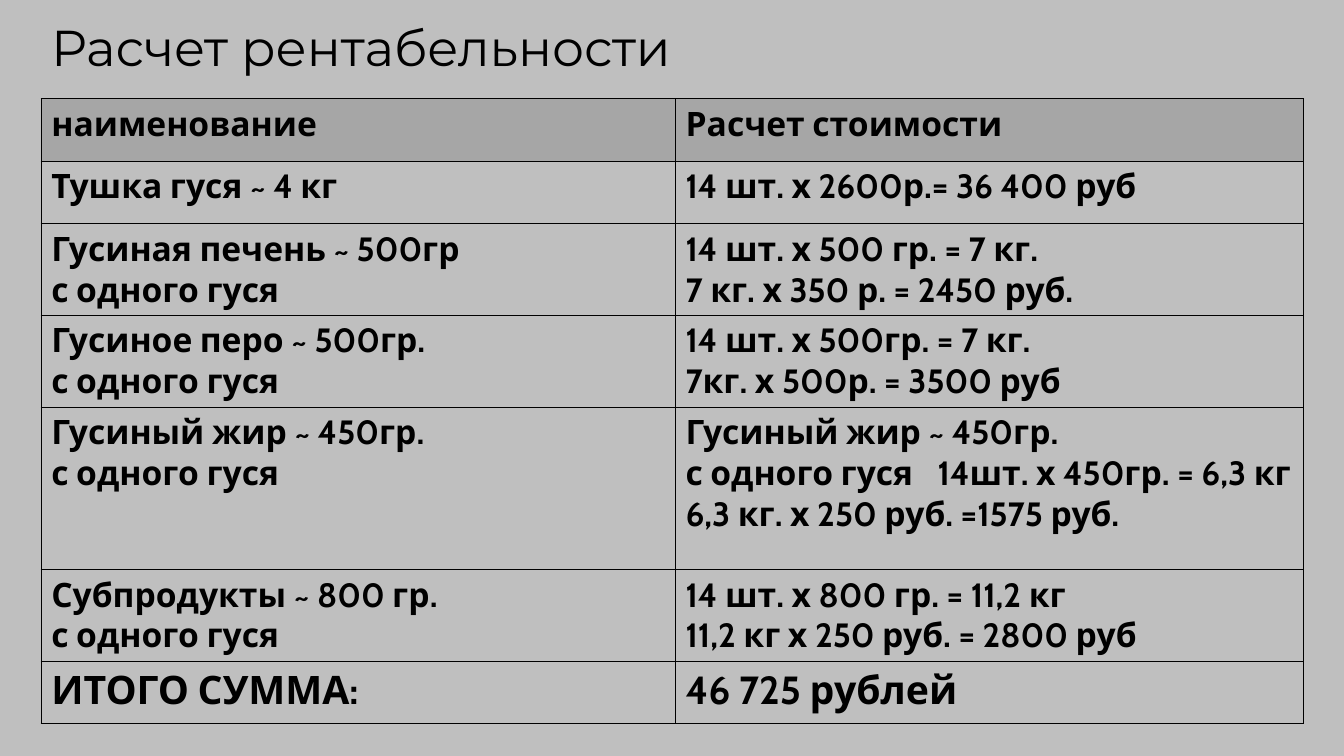
from dataclasses import dataclass

from lxml.etree import SubElement
from pptx import Presentation
from pptx.dml.color import RGBColor
from pptx.enum.text import MSO_AUTO_SIZE
from pptx.oxml.ns import qn
from pptx.util import Inches, Pt

COLORS = {"background": "BFBFBF", "header": "A6A6A6", "ink": "000000"}
TITLE_FORMAT = {"name": "Montserrat", "size": Pt(36), "bold": False}
BODY_FORMAT = {"name": "Cabin", "size": Pt(24), "bold": True}
TOTAL_FORMAT = BODY_FORMAT | {"size": Pt(28)}
COLUMN_WIDTHS = (6.29, 6.23)
LEFT = 0.41


@dataclass
class CostRow:
    item: str
    cost: str
    height: float = 0.62
    fill: str = "background"


PER_GOOSE = "с одного гуся"
COST_ROWS = [
    CostRow("наименование", "Расчет стоимости", fill="header"),
    CostRow("Тушка гуся ~ 4 кг", "14 шт. х 2600р.= 36 400 руб"),
    CostRow(f"Гусиная печень ~ 500гр\n{PER_GOOSE}",
            "14 шт. х 500 гр. = 7 кг.\n7 кг. х 350 р. = 2450 руб.", 0.85),
    CostRow(f"Гусиное перо ~ 500гр.\n{PER_GOOSE}",
            "14 шт. х 500гр. = 7 кг.\n7кг. х 500р. = 3500 руб", 0.85),
    CostRow(f"Гусиный жир ~ 450гр.\n{PER_GOOSE}",
            f"Гусиный жир ~ 450гр.\n{PER_GOOSE}\t14шт. х 450гр. = 6,3 кг\n"
            "6,3 кг. х 250 руб. =1575 руб.", 1.61),
    CostRow(f"Субпродукты ~ 800 гр.\n{PER_GOOSE}",
            "14 шт. х 800 гр. = 11,2 кг\n11,2 кг х 250 руб. = 2800 руб", 0.85),
    CostRow("ИТОГО СУММА:", "46 725 рублей"),
]


def color(name: str) -> RGBColor:
    return RGBColor.from_string(COLORS[name])


def write_text(frame, text: str, font_format: dict) -> None:
    frame.text = text
    for para in frame.paragraphs:
        for span in para.runs:
            for attribute, value in font_format.items():
                setattr(span.font, attribute, value)
            span.font.color.rgb = color("ink")


def add_borders(cell) -> None:
    """Put a 1 pt line on all four sides; call before the cell is filled."""
    properties = cell._tc.get_or_add_tcPr()
    for side in ("lnL", "lnR", "lnT", "lnB"):
        line = SubElement(properties, qn(f"a:{side}"), w=str(Pt(1)))
        line_fill = SubElement(line, qn("a:solidFill"))
        SubElement(line_fill, qn("a:srgbClr"), val=COLORS["ink"])


def add_title(page, text: str) -> None:
    box = page.shapes.add_textbox(Inches(LEFT), Inches(0.11), Inches(6.95), Inches(0.71))
    write_text(box.text_frame, text, TITLE_FORMAT)
    box.text_frame.word_wrap = False
    box.text_frame.auto_size = MSO_AUTO_SIZE.SHAPE_TO_FIT_TEXT


def add_cost_table(page, rows: list[CostRow]) -> None:
    table = page.shapes.add_table(
        len(rows), len(COLUMN_WIDTHS), Inches(LEFT), Inches(0.98),
        Inches(sum(COLUMN_WIDTHS)), Inches(sum(row.height for row in rows))).table
    table.first_row = table.horz_banding = False
    for column, width in zip(table.columns, COLUMN_WIDTHS):
        column.width = Inches(width)
    for index, row in enumerate(rows):
        table.rows[index].height = Inches(row.height)
        font_format = TOTAL_FORMAT if row is rows[-1] else BODY_FORMAT
        for cell, text in zip(table.rows[index].cells, (row.item, row.cost)):
            add_borders(cell)
            cell.fill.solid()
            cell.fill.fore_color.rgb = color(row.fill)
            write_text(cell.text_frame, text, font_format)


def main() -> None:
    deck = Presentation()
    deck.slide_width, deck.slide_height = Inches(13.33), Inches(7.5)
    page = deck.slides.add_slide(deck.slide_layouts[6])
    page.background.fill.solid()
    page.background.fill.fore_color.rgb = color("background")
    add_cost_table(page, COST_ROWS)
    add_title(page, "Расчет рентабельности")
    deck.save("out.pptx")


if __name__ == "__main__":
    main()
